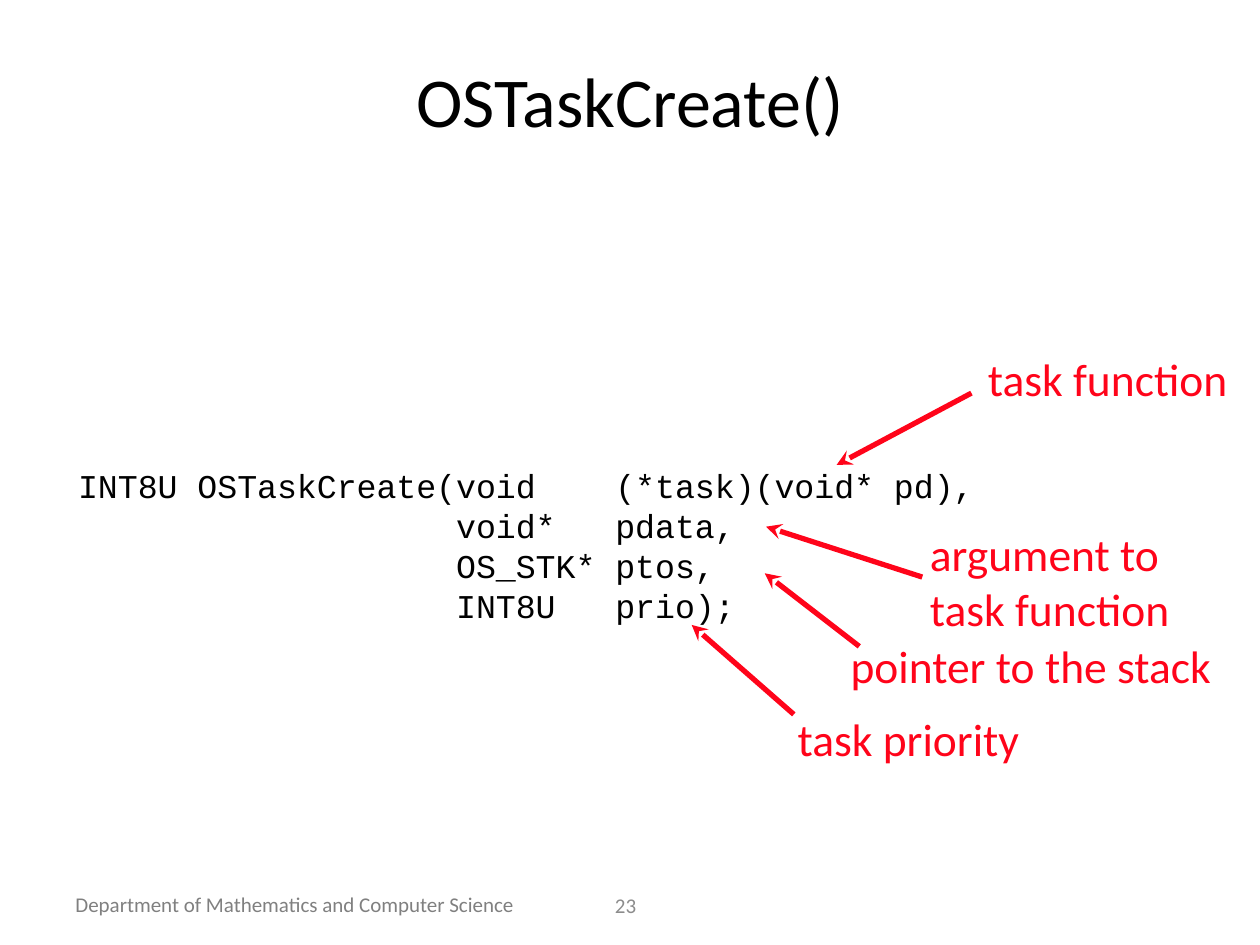
"""Build the OSTaskCreate() slide with its annotated signature."""
from dataclasses import dataclass

from lxml.etree import SubElement
from pptx import Presentation
from pptx.dml.color import RGBColor
from pptx.enum.shapes import MSO_CONNECTOR
from pptx.enum.text import MSO_ANCHOR, PP_ALIGN
from pptx.oxml.ns import qn
from pptx.shapes.connector import Connector
from pptx.slide import Slide
from pptx.text.text import TextFrame
from pptx.util import Inches, Pt

BLACK, RED = "000000", "FF041A"
FOOTER_GRAY, NUMBER_GRAY = "808080", "8C8C8C"
SIGNATURE = "\v".join([
    "INT8U OSTaskCreate(void    (*task)(void* pd),",
    "                   void*   pdata, ",
    "                   OS_STK* ptos, ",
    "                   INT8U   prio);",
])

Point = tuple[float, float]
Box = tuple[float, float, float, float]


@dataclass
class Annotation:
    text: str
    box: Box
    tip: Point
    tail: Point


ANNOTATIONS = [
    Annotation("task function", (7.84, 2.78, 1.92, 0.44), (6.64, 3.69), (7.71, 3.12)),
    Annotation("argument to\ntask function", (7.38, 4.16, 1.95, 0.9), (6.08, 4.18), (7.32, 4.58)),
    Annotation("pointer to the stack", (6.75, 5.06, 2.91, 0.44), (6.07, 4.55), (6.82, 5.13)),
    Annotation("task priority", (6.33, 5.64, 1.78, 0.44), (5.49, 4.96), (6.3, 5.67)),
]


def color(value: str) -> RGBColor:
    return RGBColor.from_string(value)


def write(frame: TextFrame, text: str, size: float, fill: str, font: str = "Calibri",
          alignment: PP_ALIGN = PP_ALIGN.LEFT) -> None:
    frame.text = text
    for paragraph in frame.paragraphs:
        paragraph.alignment = alignment
        paragraph.font.size = Pt(size)
        paragraph.font.name = font
        paragraph.font.color.rgb = color(fill)


def add_text_frame(shapes, box: Box, wrap: bool = True, inset: bool = False,
                   anchor: MSO_ANCHOR = MSO_ANCHOR.MIDDLE) -> TextFrame:
    frame = shapes.add_textbox(*map(Inches, box)).text_frame
    frame.word_wrap = wrap
    frame.vertical_anchor = anchor
    if not inset:
        frame.margin_left = frame.margin_right = frame.margin_top = frame.margin_bottom = 0
    return frame


def style_arrow(arrow: Connector) -> None:
    arrow.line.color.rgb = color(RED)
    arrow.line.width = Pt(3)
    SubElement(arrow.line._get_or_add_ln(), qn("a:headEnd"), type="stealth")
    SubElement(arrow._element.spPr, qn("a:effectLst"))


def add_annotation(slide: Slide, annotation: Annotation) -> None:
    group = slide.shapes.add_group_shape()
    arrow = group.shapes.add_connector(
        MSO_CONNECTOR.STRAIGHT, *map(Inches, annotation.tip + annotation.tail))
    style_arrow(arrow)
    frame = add_text_frame(group.shapes, annotation.box, wrap=False)
    write(frame, annotation.text, 26, RED)


def main() -> None:
    presentation = Presentation()
    presentation.slide_width, presentation.slide_height = Inches(10), Inches(7.5)
    slide = presentation.slides.add_slide(presentation.slide_layouts[5])

    title = slide.shapes.title
    title.left, title.top, title.width, title.height = map(Inches, (0.5, 0.3, 9, 0.98))
    title.text_frame.vertical_anchor = MSO_ANCHOR.MIDDLE
    write(title.text_frame, "OSTaskCreate()", 40, BLACK, alignment=PP_ALIGN.CENTER)

    signature = add_text_frame(slide.shapes, (0.62, 3.69, 7.53, 1.27))
    write(signature, SIGNATURE, 19, BLACK, "Courier New")
    for annotation in ANNOTATIONS:
        add_annotation(slide, annotation)

    footer = add_text_frame(slide.shapes, (0.5, 7.03, 3.92, 0.3), inset=True,
                            anchor=MSO_ANCHOR.TOP)
    write(footer, "Department of Mathematics and Computer Science", 12, FOOTER_GRAY)
    number = add_text_frame(slide.shapes, (4.42, 7.03, 1.09, 0.3), inset=True)
    write(number, "23", 12, NUMBER_GRAY, alignment=PP_ALIGN.CENTER)

    presentation.save("out.pptx")


if __name__ == "__main__":
    main()
